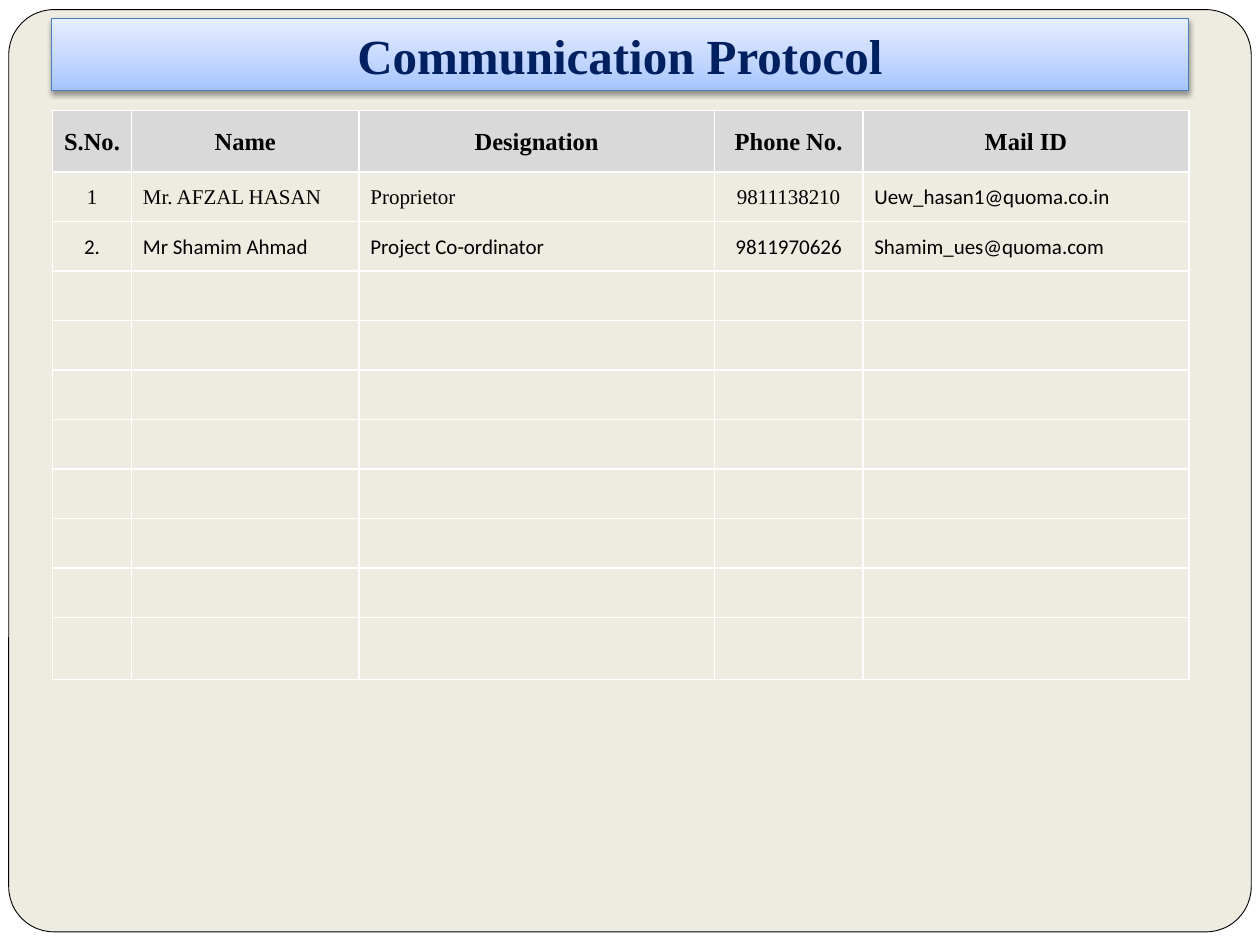
import pptx
import pptx.dml.color
import pptx.enum.shapes
import pptx.enum.text
import pptx.oxml
import pptx.oxml.ns
import pptx.util

Pt = pptx.util.Pt
RGB = pptx.dml.color.RGBColor
ALIGN = pptx.enum.text.PP_ALIGN
ANCHOR = pptx.enum.text.MSO_ANCHOR

BLACK = RGB(0x00, 0x00, 0x00)
WHITE = RGB(0xFF, 0xFF, 0xFF)
CREAM = RGB(0xEE, 0xEC, 0xE1)
GREY = RGB(0xD9, 0xD9, 0xD9)
NAVY = RGB(0x00, 0x20, 0x60)
BLUE = RGB(0x4B, 0x7E, 0xBC)
TITLE_STOPS = [
    (0, RGB(0xA4, 0xC4, 0xFF)),
    (35, RGB(0xBF, 0xD4, 0xFF)),
    (100, RGB(0xE6, 0xEE, 0xFF)),
]

SERIF, SANS = "Times New Roman", "Calibri"
TITLE_FONT = {"name": SERIF, "size": Pt(28), "bold": True}
HEAD_FONT = {"name": SERIF, "size": Pt(14), "bold": True}
SERIF_FONT = {"name": SERIF, "size": Pt(12), "bold": False}
SANS_FONT = {"name": SANS, "size": Pt(12), "bold": False}

HEADERS = ["S.No.", "Name", "Designation", "Phone No.", "Mail ID"]
CONTACTS = [
    ["1", "Mr. AFZAL HASAN", "Proprietor", "9811138210", "Uew_hasan1@quoma.co.in"],
    ["2.", "Mr Shamim Ahmad", "Project Co-ordinator", "9811970626", "Shamim_ues@quoma.com"],
]
COL_WIDTHS = [45.2, 130, 203, 85, 186.2]
CENTRED_COLS = {0, 3}
EMPTY_ROWS = 8
END_ROW, MID_ROW = 35.2, 28.3


def xml(text):
    """Parse a fragment whose root takes the drawing namespace."""
    tag, rest = text.split(" ", 1)
    return pptx.oxml.parse_xml(f"{tag} {pptx.oxml.ns.nsdecls('a')} {rest}")


class Deck:
    def __init__(self, width, height):
        self.prs = pptx.Presentation()
        self.prs.slide_width, self.prs.slide_height = Pt(width), Pt(height)
        self.s = self.prs.slides.add_slide(self.prs.slide_layouts[5])

    def text(self, tf, words, font, color, align):
        p = tf.paragraphs[0]
        p.alignment = align
        r = p.add_run()
        r.text = words
        for name, value in font.items():
            setattr(r.font, name, value)
        r.font.color.rgb = color

    def panel(self, x, y, w, h, radius):
        kind = pptx.enum.shapes.MSO_SHAPE.ROUNDED_RECTANGLE
        sp = self.s.shapes.add_shape(kind, Pt(x), Pt(y), Pt(w), Pt(h))
        sp.adjustments[0] = radius
        sp.shadow.inherit = False
        sp.fill.solid()
        sp.fill.fore_color.rgb = CREAM
        sp.line.color.rgb = BLACK
        sp.line.width = Pt(0.5)

    def title(self, words, x, y, w, h):
        sp = self.s.shapes.title
        sp.left, sp.top, sp.width, sp.height = Pt(x), Pt(y), Pt(w), Pt(h)
        # Stack the title above the panel
        sp.element.getparent().append(sp.element)
        # Gradient from the bottom up
        sp.fill.gradient()
        sp.fill.gradient_angle = 90
        stops = sp.element.spPr.find(".//" + pptx.oxml.ns.qn("a:gsLst"))
        stops.clear()
        for pos, color in TITLE_STOPS:
            stops.append(xml(f'<a:gs pos="{pos * 1000}"><a:srgbClr val="{color}"/></a:gs>'))
        sp.line.color.rgb = BLUE
        sp.line.width = Pt(0.75)
        # Soft shadow straight down
        sp.shadow.inherit = False
        effects = sp.element.spPr.find(pptx.oxml.ns.qn("a:effectLst"))
        effects.append(xml(
            f'<a:outerShdw blurRad="{Pt(3.1)}" dist="{Pt(1.6)}" dir="5400000" rotWithShape="0">'
            '<a:srgbClr val="000000"><a:alpha val="38000"/></a:srgbClr></a:outerShdw>'))
        tf = sp.text_frame
        tf.word_wrap = True
        tf.auto_size = pptx.enum.text.MSO_AUTO_SIZE.NONE
        tf.vertical_anchor = ANCHOR.MIDDLE
        self.text(tf, words, TITLE_FONT, NAVY, ALIGN.CENTER)

    def cell(self, cell, fill, indent):
        tc_pr = cell._tc.get_or_add_tcPr()
        for side in ("lnL", "lnR", "lnT", "lnB"):
            tc_pr.append(xml(
                f'<a:{side} w="{Pt(1)}"><a:solidFill><a:srgbClr val="{WHITE}"/>'
                f"</a:solidFill></a:{side}>"))
        if fill is None:
            cell.fill.background()
        else:
            cell.fill.solid()
            cell.fill.fore_color.rgb = fill
        cell.vertical_anchor = ANCHOR.MIDDLE
        cell.margin_left = Pt(indent)
        cell.margin_right = cell.margin_top = Pt(0.7)
        cell.margin_bottom = 0

    def table(self, rows, x, y, widths, heights):
        frame = self.s.shapes.add_table(
            len(heights), len(widths), Pt(x), Pt(y), Pt(sum(widths)), Pt(sum(heights)))
        table = frame.table
        table.first_row = table.horz_banding = False
        for col, width in zip(table.columns, widths):
            col.width = Pt(width)
        for i, height in enumerate(heights):
            table.rows[i].height = Pt(height)
            for j in range(len(widths)):
                cell = table.cell(i, j)
                centred = i == 0 or j in CENTRED_COLS
                self.cell(cell, GREY if i == 0 else None, 0.7 if centred else 6.5)
                if i >= len(rows):
                    continue
                if i == 0:
                    font = HEAD_FONT
                elif i == 1 and j < len(widths) - 1:
                    font = SERIF_FONT
                else:
                    font = SANS_FONT
                align = ALIGN.CENTER if centred else ALIGN.LEFT
                self.text(cell.text_frame, rows[i][j], font, BLACK, align)


def main():
    deck = Deck(720, 540)
    # Rounded backdrop
    deck.panel(5, 5.5, 710, 527, 0.049)
    # Title bar
    deck.title("Communication Protocol", 29.5, 10.5, 649.5, 41.3)
    # Contact table
    rows = [HEADERS] + CONTACTS
    mid_rows = len(CONTACTS) + EMPTY_ROWS - 1
    heights = [END_ROW] + [MID_ROW] * mid_rows + [END_ROW]
    deck.table(rows, 30, 63.2, COL_WIDTHS, heights)
    deck.prs.save("out.pptx")


if __name__ == "__main__":
    main()
